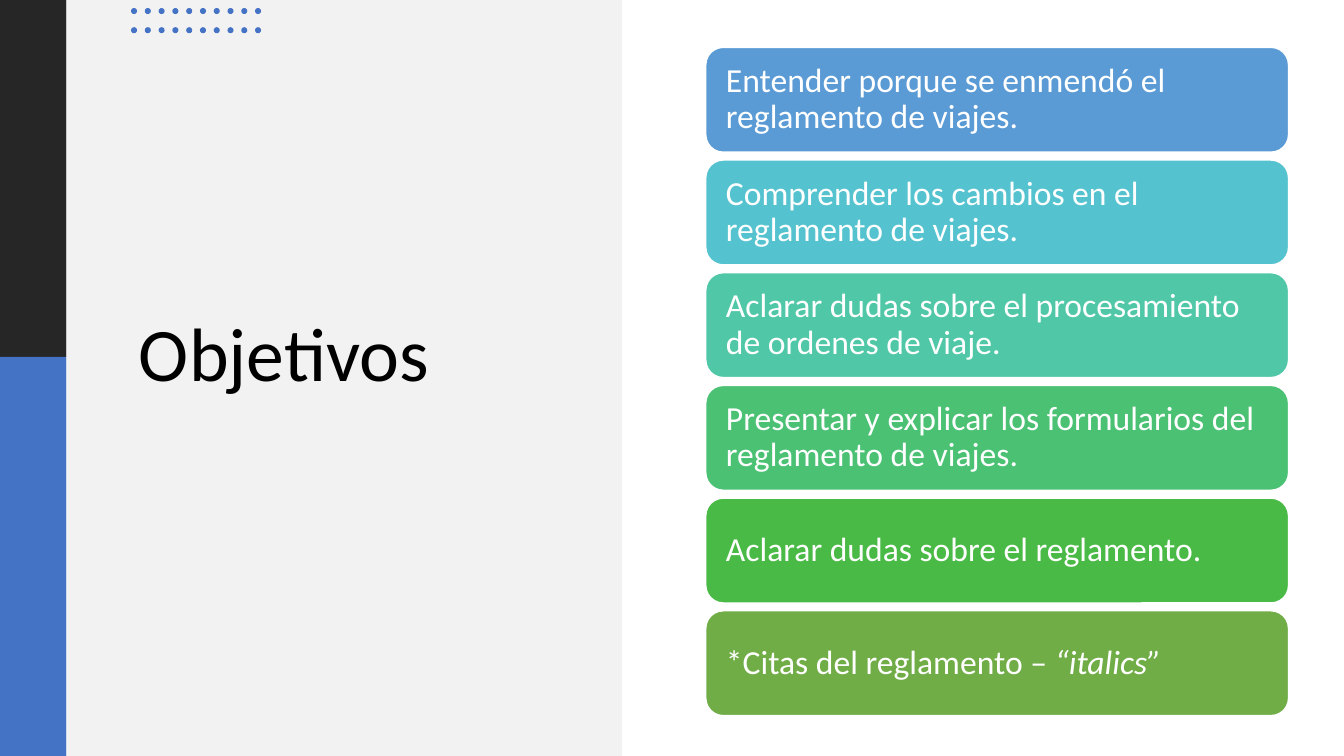
from pptx import Presentation
from pptx.dml.color import RGBColor
from pptx.enum.shapes import MSO_SHAPE
from pptx.enum.text import MSO_ANCHOR, PP_ALIGN
from pptx.util import Inches, Pt

RECTANGLE = MSO_SHAPE.RECTANGLE
ROUNDED = MSO_SHAPE.ROUNDED_RECTANGLE
OVAL = MSO_SHAPE.OVAL
MIDDLE = MSO_ANCHOR.MIDDLE
LEFT = PP_ALIGN.LEFT

WHITE = RGBColor(0xFF, 0xFF, 0xFF)
BLACK = RGBColor(0x00, 0x00, 0x00)
CHARCOAL = RGBColor(0x26, 0x26, 0x26)
BLUE = RGBColor(0x44, 0x72, 0xC4)
PALE_GRAY = RGBColor(0xF2, 0xF2, 0xF2)
FONT = "Calibri"

TITLE = "Objetivos"
OBJECTIVES = [
    (RGBColor(0x5B, 0x9B, 0xD5), "Entender porque se enmendó el reglamento de viajes.", ""),
    (RGBColor(0x55, 0xC3, 0xCF), "Comprender los cambios en el reglamento de viajes.", ""),
    (RGBColor(0x50, 0xC8, 0xA7), "Aclarar dudas sobre el procesamiento de ordenes de viaje.", ""),
    (RGBColor(0x4B, 0xC1, 0x74), "Presentar y explicar los formularios del reglamento de viajes.", ""),
    (RGBColor(0x4A, 0xBA, 0x46), "Aclarar dudas sobre el reglamento.", ""),
    (RGBColor(0x70, 0xAD, 0x47), "*Citas del reglamento – ", "“italics”"),
]
PANELS = [
    (0, 0, 0.66, 3.54, CHARCOAL),
    (0, 3.54, 0.66, 3.96, BLUE),
    (0.66, 0, 5.51, 7.5, PALE_GRAY),
]
DOT_COLUMNS, DOT_ROWS = 10, 2
DOT_LEFT, DOT_TOP, DOT_SIZE = 1.3, 0.08, 0.06
DOT_SPAN, DOT_ROW_STEP = 1.23, 0.19
CARD_LEFT, CARD_TOP, CARD_WIDTH, CARD_HEIGHT = 7, 0.47, 5.78, 1.04
CARD_SPAN, CARD_INSET = 5.59, 0.15


def add_filled(slide, kind, left, top, width, height, color):
    shape = slide.shapes.add_shape(
        kind, Inches(left), Inches(top), Inches(width), Inches(height))
    shape.shadow.inherit = False
    shape.fill.solid()
    shape.fill.fore_color.rgb = color
    shape.line.fill.background()
    return shape


def format_text(text_frame, size, color):
    text_frame.word_wrap = True
    text_frame.vertical_anchor = MIDDLE
    paragraph = text_frame.paragraphs[0]
    paragraph.alignment = LEFT
    paragraph.line_spacing = 0.9
    for run in paragraph.runs:
        run.font.name = FONT
        run.font.size = Pt(size)
        run.font.color.rgb = color


def add_title(slide):
    box = slide.shapes.add_textbox(
        Inches(1.28), Inches(1.31), Inches(4.12), Inches(4.46))
    box.text_frame.text = TITLE
    format_text(box.text_frame, 54, BLACK)


def add_dots(slide):
    for column in range(DOT_COLUMNS):
        left = DOT_LEFT + column * DOT_SPAN / (DOT_COLUMNS - 1)
        for row in range(DOT_ROWS):
            add_filled(slide, OVAL, left, DOT_TOP + row * DOT_ROW_STEP,
                       DOT_SIZE, DOT_SIZE, BLUE)


def add_objectives(slide):
    step = CARD_SPAN / (len(OBJECTIVES) - 1)
    for index, (color, text, italic_text) in enumerate(OBJECTIVES):
        card = add_filled(slide, ROUNDED, CARD_LEFT, CARD_TOP + index * step,
                          CARD_WIDTH, CARD_HEIGHT, color)
        card.line.color.rgb = WHITE
        card.line.width = Pt(1)
        text_frame = card.text_frame
        text_frame.margin_left = text_frame.margin_right = Inches(CARD_INSET)
        text_frame.margin_top = text_frame.margin_bottom = Inches(CARD_INSET)
        text_frame.text = text
        if italic_text:
            run = text_frame.paragraphs[0].add_run()
            run.text = italic_text
            run.font.italic = True
        format_text(text_frame, 24, WHITE)


def main():
    presentation = Presentation()
    presentation.slide_width = Inches(13.33)
    presentation.slide_height = Inches(7.5)
    slide = presentation.slides.add_slide(presentation.slide_layouts[6])
    for left, top, width, height, color in PANELS:
        add_filled(slide, RECTANGLE, left, top, width, height, color)
    add_title(slide)
    add_dots(slide)
    add_objectives(slide)
    presentation.save("out.pptx")


if __name__ == "__main__":
    main()
